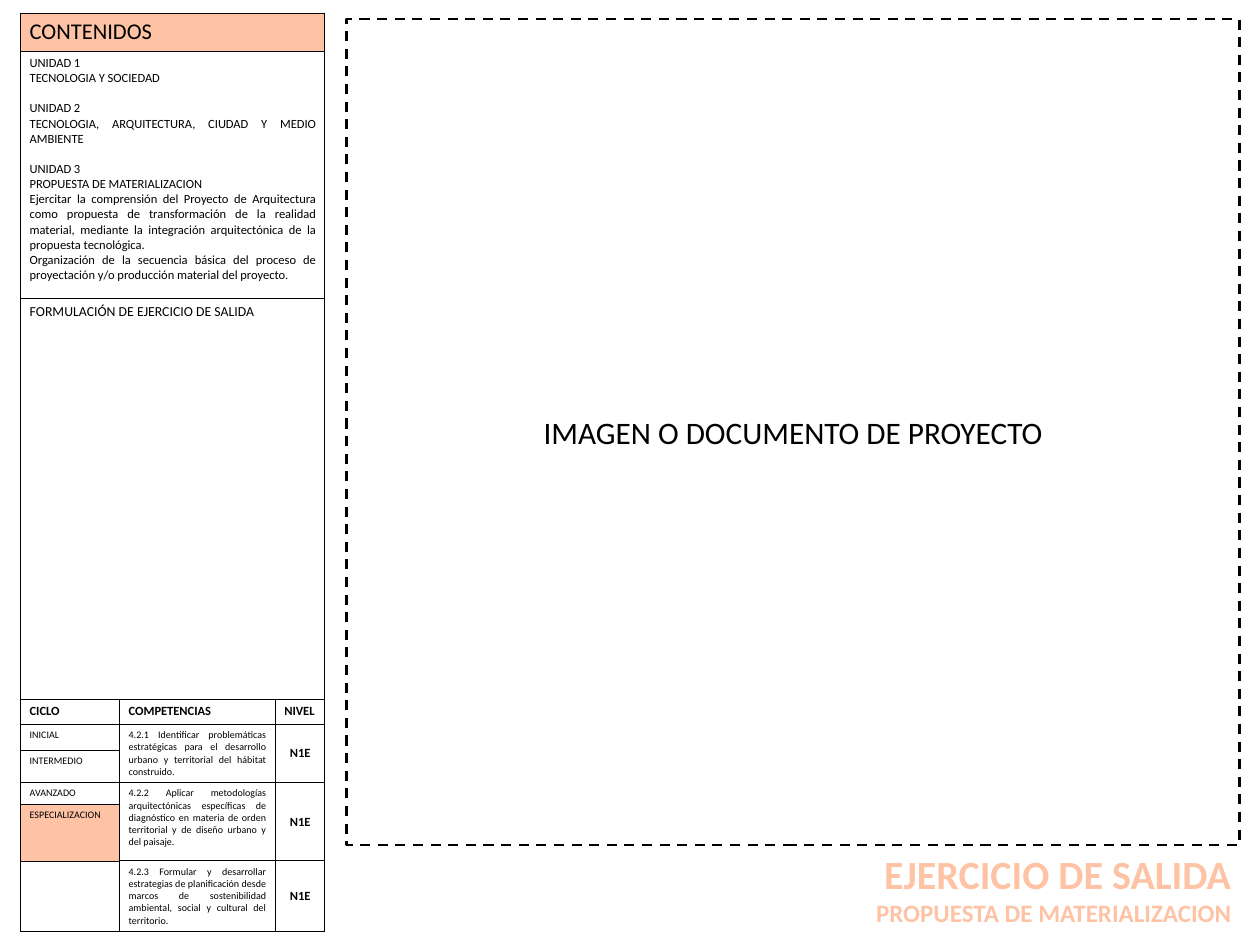
from dataclasses import dataclass
from lxml import etree
from pptx import Presentation
from pptx.dml.color import RGBColor
from pptx.enum.dml import MSO_LINE
from pptx.enum.shapes import MSO_SHAPE
from pptx.enum.text import MSO_ANCHOR, PP_ALIGN
from pptx.oxml.ns import qn
from pptx.util import Inches, Pt

LEFT, CENTER, RIGHT, JUSTIFY = PP_ALIGN.LEFT, PP_ALIGN.CENTER, PP_ALIGN.RIGHT, PP_ALIGN.JUSTIFY
TOP, MIDDLE = MSO_ANCHOR.TOP, MSO_ANCHOR.MIDDLE
RECTANGLE, DASH = MSO_SHAPE.RECTANGLE, MSO_LINE.DASH


@dataclass(frozen=True)
class Theme:
    font: str = "Calibri"
    ink: RGBColor = RGBColor(0, 0, 0)
    accent: RGBColor = RGBColor(0xFD, 0xC3, 0xA4)
    title: int = 32
    image_label: int = 25
    subtitle: int = 20
    heading: int = 18
    section: int = 11
    body: int = 10
    small: int = 8
    border: float = 1
    thin_border: float = 0.5


THEME = Theme()


@dataclass(frozen=True)
class Line:
    text: str
    size: int
    bold: bool = False
    color: RGBColor = THEME.ink
    align: PP_ALIGN = JUSTIFY
    space_before: float = 0


@dataclass(frozen=True)
class Entry:
    row: int
    column: int
    lines: tuple[Line, ...]
    rows: int = 1
    columns: int = 1
    anchor: MSO_ANCHOR = TOP
    filled: bool = False


UNITS = (
    ("UNIDAD 1", "TECNOLOGIA Y SOCIEDAD"),
    ("UNIDAD 2", "TECNOLOGIA, ARQUITECTURA, CIUDAD Y MEDIO AMBIENTE"),
    (
        "UNIDAD 3",
        "PROPUESTA DE MATERIALIZACION",
        "Ejercitar la comprensión del Proyecto de Arquitectura como propuesta de transformación "
        "de la realidad material, mediante la integración arquitectónica de la propuesta tecnológica.",
        "Organización de la secuencia básica del proceso de proyectación y/o producción "
        "material del proyecto.",
    ),
)
CYCLES = ("INICIAL", "INTERMEDIO", "AVANZADO", "ESPECIALIZACION")
COMPETENCES = (
    "4.2.1 Identificar problemáticas estratégicas para el desarrollo urbano y territorial "
    "del hábitat construido.",
    "4.2.2 Aplicar metodologías arquitectónicas específicas de diagnóstico en materia de "
    "orden territorial y de diseño urbano y del paisaje.",
    "4.2.3 Formular y desarrollar estrategias de planificación desde marcos de "
    "sostenibilidad ambiental, social y cultural del territorio.",
)
COLUMN_WIDTHS = (1.1, 1.73, 0.55)
ROW_HEIGHTS = (0.42, 2.75, 4.45, 0.28, 0.29, 0.34, 0.24, 0.63, 0.77)
HEADER_ROW = 3
FIRST_CYCLE_ROW = 4


def content_entries() -> list[Entry]:
    unit_lines = tuple(
        Line(text, THEME.body, space_before=12 if unit and not index else 0)
        for unit, texts in enumerate(UNITS)
        for index, text in enumerate(texts)
    )
    entries = [
        Entry(0, 0, (Line("CONTENIDOS", THEME.heading),), columns=3, filled=True),
        Entry(1, 0, unit_lines, columns=3),
        Entry(2, 0, (Line("FORMULACIÓN DE EJERCICIO DE SALIDA", THEME.section),), columns=3),
    ]
    for column, text in enumerate(("CICLO", "COMPETENCIAS", "NIVEL")):
        entries.append(Entry(HEADER_ROW, column, (Line(text, THEME.body, True),)))
    for index, text in enumerate(CYCLES):
        filled = text == "ESPECIALIZACION"
        entries.append(Entry(FIRST_CYCLE_ROW + index, 0, (Line(text, THEME.small),), filled=filled))
    for index, text in enumerate(COMPETENCES):
        row = FIRST_CYCLE_ROW + 2 * index
        rows = min(2, len(ROW_HEIGHTS) - row)
        level = Line("N1E", THEME.body, True, align=CENTER)
        entries.append(Entry(row, 1, (Line(text, THEME.small),), rows))
        entries.append(Entry(row, 2, (level,), rows, anchor=MIDDLE))
    return entries


def write_lines(frame, lines: tuple[Line, ...]) -> None:
    for index, line in enumerate(lines):
        para = frame.paragraphs[0] if index == 0 else frame.add_paragraph()
        para.text = line.text
        para.alignment = line.align
        para.space_before = Pt(line.space_before)
        para.font.name = THEME.font
        para.font.size = Pt(line.size)
        para.font.bold = line.bold
        para.font.color.rgb = line.color


def is_thin_below(row: int, column: int) -> bool:
    return row == 1 or (column == 0 and FIRST_CYCLE_ROW <= row < len(ROW_HEIGHTS) - 1)


def draw_borders(cell, row: int, column: int) -> None:
    thin = {"a:lnT": is_thin_below(row - 1, column), "a:lnB": is_thin_below(row, column)}
    properties = cell._tc.get_or_add_tcPr()
    for side in ("a:lnL", "a:lnR", "a:lnT", "a:lnB"):
        width = THEME.thin_border if thin.get(side) else THEME.border
        edge = etree.SubElement(properties, qn(side), w=str(Pt(width)))
        fill = etree.SubElement(edge, qn("a:solidFill"))
        etree.SubElement(fill, qn("a:srgbClr"), val=str(THEME.ink))


def draw_contents_table(page) -> None:
    table = page.shapes.add_table(
        len(ROW_HEIGHTS), len(COLUMN_WIDTHS), Inches(0.23), Inches(0.15),
        Inches(sum(COLUMN_WIDTHS)), Inches(sum(ROW_HEIGHTS)),
    ).table
    table.first_row = False
    table.horz_banding = False
    for column, width in zip(table.columns, COLUMN_WIDTHS):
        column.width = Inches(width)
    for row, height in zip(table.rows, ROW_HEIGHTS):
        row.height = Inches(height)
    for row in range(len(ROW_HEIGHTS)):
        for column in range(len(COLUMN_WIDTHS)):
            cell = table.cell(row, column)
            draw_borders(cell, row, column)
            cell.fill.background()
    for entry in content_entries():
        cell = table.cell(entry.row, entry.column)
        if entry.rows > 1 or entry.columns > 1:
            cell.merge(table.cell(entry.row + entry.rows - 1, entry.column + entry.columns - 1))
        cell.vertical_anchor = entry.anchor
        write_lines(cell.text_frame, entry.lines)
        if entry.filled:
            cell.fill.solid()
            cell.fill.fore_color.rgb = THEME.accent


def draw_title(page) -> None:
    box = page.shapes.add_textbox(Inches(4.39), Inches(9.39), Inches(9.39), Inches(0.98))
    box.text_frame.word_wrap = True
    write_lines(box.text_frame, (
        Line("EJERCICIO DE SALIDA", THEME.title, True, THEME.accent, RIGHT),
        Line("PROPUESTA DE MATERIALIZACION", THEME.subtitle, True, THEME.accent, RIGHT),
    ))


def draw_image_area(page) -> None:
    area = page.shapes.add_shape(RECTANGLE, Inches(3.85), Inches(0.21), Inches(9.92), Inches(9.18))
    area.shadow.inherit = False
    area.fill.background()
    area.line.color.rgb = THEME.ink
    area.line.width = Pt(2)
    area.line.dash_style = DASH
    area.text_frame.word_wrap = True
    area.text_frame.vertical_anchor = MIDDLE
    label = Line("IMAGEN O DOCUMENTO DE PROYECTO", THEME.image_label, align=CENTER)
    write_lines(area.text_frame, (label,))


def main() -> None:
    deck = Presentation()
    deck.slide_width = Inches(14)
    deck.slide_height = Inches(10.5)
    page = deck.slides.add_slide(deck.slide_layouts[6])
    draw_contents_table(page)
    draw_title(page)
    draw_image_area(page)
    deck.save("out.pptx")


if __name__ == "__main__":
    main()
